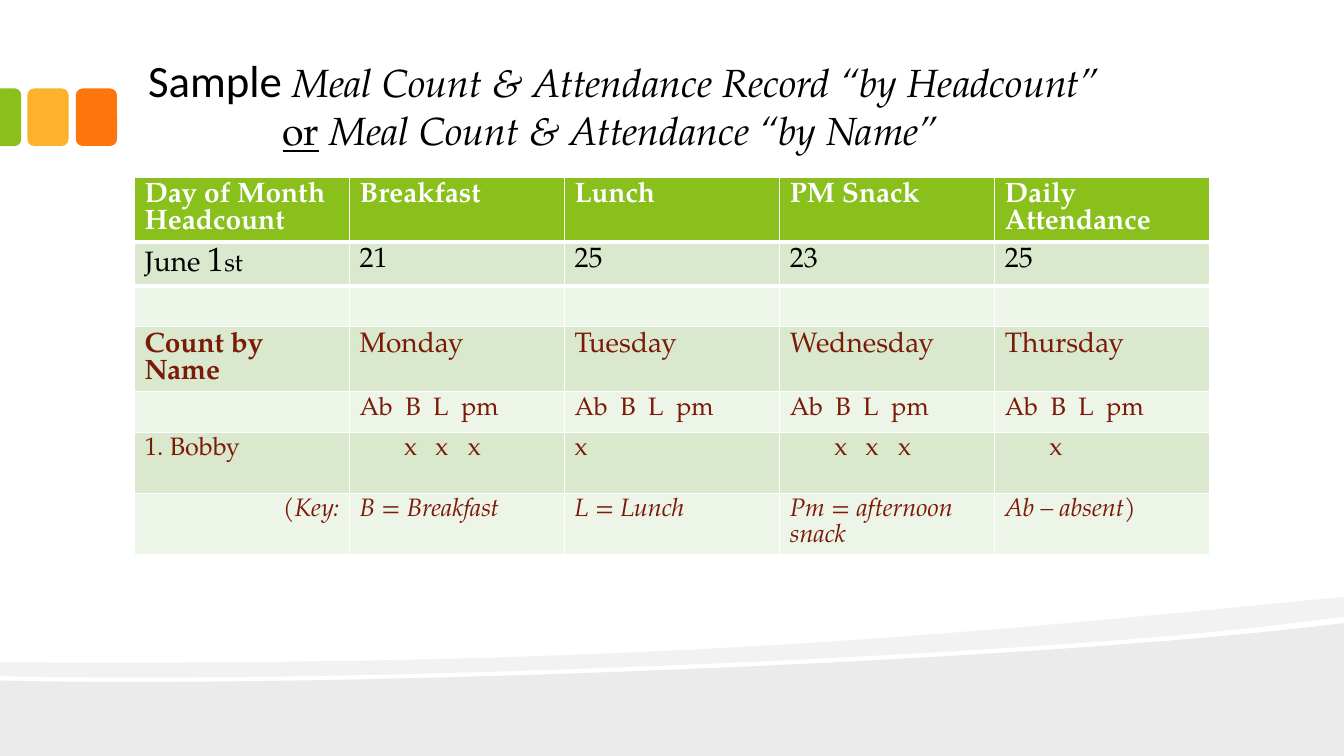
"""Build the sample meal count and attendance slide."""
from lxml.etree import SubElement
from pptx import Presentation
from pptx.dml.color import RGBColor
from pptx.enum.shapes import MSO_SHAPE
from pptx.enum.text import MSO_ANCHOR, MSO_AUTO_SIZE, PP_ALIGN
from pptx.oxml.ns import qn
from pptx.util import Cm, Pt

SERIF = "TeX Gyre Pagella"


def paint(fill, code):
    fill.solid()
    fill.fore_color.rgb = RGBColor.from_string(code)


def set_tabs(para, stops):
    tabs = SubElement(para._p.get_or_add_pPr(), qn("a:tabLst"))
    for stop in stops:
        SubElement(tabs, qn("a:tab"), pos=str(Cm(stop)), algn="l")


deck = Presentation()
deck.slide_width, deck.slide_height = Cm(33.87), Cm(19.05)
slide = deck.slides.add_slide(deck.slide_layouts[5])
shapes = slide.shapes

ground = [
    [(33.87, 15.7)], [(33.87, 19.05)], [(0, 19.05)], [(0, 17.15)],
    [(8.94, 17.35), (26.47, 16.64), (33.87, 15.7)],
]
band = [
    [(33.87, 15.04)], [(33.87, 15.54)],
    [(31.88, 15.82), (29.18, 16.08), (26.14, 16.28)],
    [(17.73, 16.84), (6.55, 17.2), (0, 17.04)],
    [(0, 16.69)],
    [(16.56, 16.81), (24.66, 15.93), (33.87, 15.04)],
]
for wave, alpha in ((ground, 8), (band, 5)):
    spots = [wave[0][0]]
    for step in wave[1:]:
        if len(step) == 1:
            spots += step
            continue
        ends = [spots[-1], *step]
        for i in range(1, 25):
            t = i / 24
            mix = ((1 - t) ** 3, 3 * t * (1 - t) ** 2, 3 * t * t * (1 - t), t ** 3)
            spots.append(tuple(sum(m * e[k] for m, e in zip(mix, ends)) for k in (0, 1)))
    dots = [(Cm(x), Cm(y)) for x, y in spots]
    pen = shapes.build_freeform(*dots[0], scale=1.0)
    pen.add_line_segments(dots[1:])
    shape = pen.convert_to_shape()
    shape.shadow.inherit = False
    paint(shape.fill, "000000")
    shape.line.fill.background()
    tint = shape.fill._xPr.find(qn("a:solidFill"))[0]
    SubElement(tint, qn("a:alpha"), val=str(alpha * 1000))

for kind, left, top, width, height, turn, code in (
    (MSO_SHAPE.ROUNDED_RECTANGLE, 1.91, 2.23, 1.04, 1.45, 0, "FE750E"),
    (MSO_SHAPE.ROUNDED_RECTANGLE, 0.69, 2.23, 1.04, 1.45, 0, "FCB22C"),
    (MSO_SHAPE.ROUND_2_SAME_RECTANGLE, -0.46, 2.69, 1.45, 0.53, 90, "89C01C"),
):
    tile = shapes.add_shape(kind, Cm(left), Cm(top), Cm(width), Cm(height))
    tile.rotation = turn
    tile.shadow.inherit = False
    paint(tile.fill, code)
    tile.line.fill.background()
tile.adjustments[0] = 0.29

title = shapes.title
title.left, title.top, title.width, title.height = Cm(3.39), Cm(0.43), Cm(27.08), Cm(3.61)
frame = title.text_frame
frame.auto_size = MSO_AUTO_SIZE.NONE
frame.word_wrap = True
frame.vertical_anchor = MSO_ANCHOR.BOTTOM
frame.margin_left = frame.margin_right = Cm(0.34)
frame.margin_top = frame.margin_bottom = Cm(0.18)
para = frame.paragraphs[0]
para.alignment = PP_ALIGN.LEFT
set_tabs(para, [3.39])
for text, size, face, slant, under in (
    ("Sample ", 32, "Calibri", False, False),
    ("Meal Count & Attendance Record “by Headcount”", 28, SERIF, True, False),
    ("\t", 28, SERIF, True, False),
    ("or", 28, SERIF, False, True),
    (" ", 28, SERIF, False, False),
    ("Meal Count & Attendance “by Name”", 28, SERIF, True, False),
):
    if text == "\t":
        para.add_line_break()
    run = para.add_run()
    run.text = text
    font = run.font
    font.size, font.name, font.italic, font.underline = Pt(size), face, slant, under
    paint(font.fill, "000000")

meals = "Ab\tB\tL\tpm"
rows = [
    (1.61, 20, "FFFFFF", ["Day of Month\nHeadcount", "Breakfast", "Lunch", "PM Snack",
                          "Daily Attendance"]),
    (1.11, 20, "000000", ["", "21", "25", "23", "25"]),
    (1.03, 18, "000000", [""] * 5),
    (1.63, 20, "7A1A07", ["Count by Name", "Monday", "Tuesday", "Wednesday", "Thursday"]),
    (1.03, 18, "7A1A07", ["", meals, meals, meals, meals]),
    (1.53, 18, "7A1A07", ["1. Bobby", "\tx\tx\tx", "x", "\tx\tx\tx", "\tx"]),
    (1.53, 18, "7A1A07", ["", "B = Breakfast", "L = Lunch", "Pm = afternoon snack",
                          "Ab – absent)"]),
]
mixed = {
    1: [("June ", 20, False), ("1", 24, False), ("st", 18, False)],
    6: [("(", 18, False), ("Key:", 18, True)],
}
stops = {4: (1.15, 1.85, 2.56), 5: (1.12, 1.91, 2.73)}
table = shapes.add_table(7, 5, Cm(3.39), Cm(4.46), Cm(27.1), Cm(9.47)).table
for r, (height, size, code, texts) in enumerate(rows):
    table.rows[r].height = Cm(height)
    for c, text in enumerate(texts):
        cell = table.cell(r, c)
        paint(cell.fill, "89C01C" if r == 0 else "DAE8CD" if r % 2 else "EDF4E8")
        if r < 2:
            edge = SubElement(cell._tc.tcPr, qn("a:lnT" if r else "a:lnB"), w=str(Pt(3)))
            ink = SubElement(SubElement(edge, qn("a:solidFill")), qn("a:srgbClr"))
            ink.set("val", "FFFFFF")
            cell._tc.tcPr.insert(0, edge)
        cell.text = text
        for para in cell.text_frame.paragraphs:
            if "\t" in text:
                set_tabs(para, stops[r])
            font = para.font
            font.name, font.size = SERIF, Pt(size)
            font.bold = r == 0 or (r, c) == (3, 0)
            font.italic = r == 6 and c > 0
            paint(font.fill, code)
        if c == 0 and r in mixed:
            for part, points, slant in mixed[r]:
                run = para.add_run()
                run.text = part
                run.font.size, run.font.italic = Pt(points), slant
table.cell(6, 0).text_frame.paragraphs[0].alignment = PP_ALIGN.RIGHT

deck.save("out.pptx")
